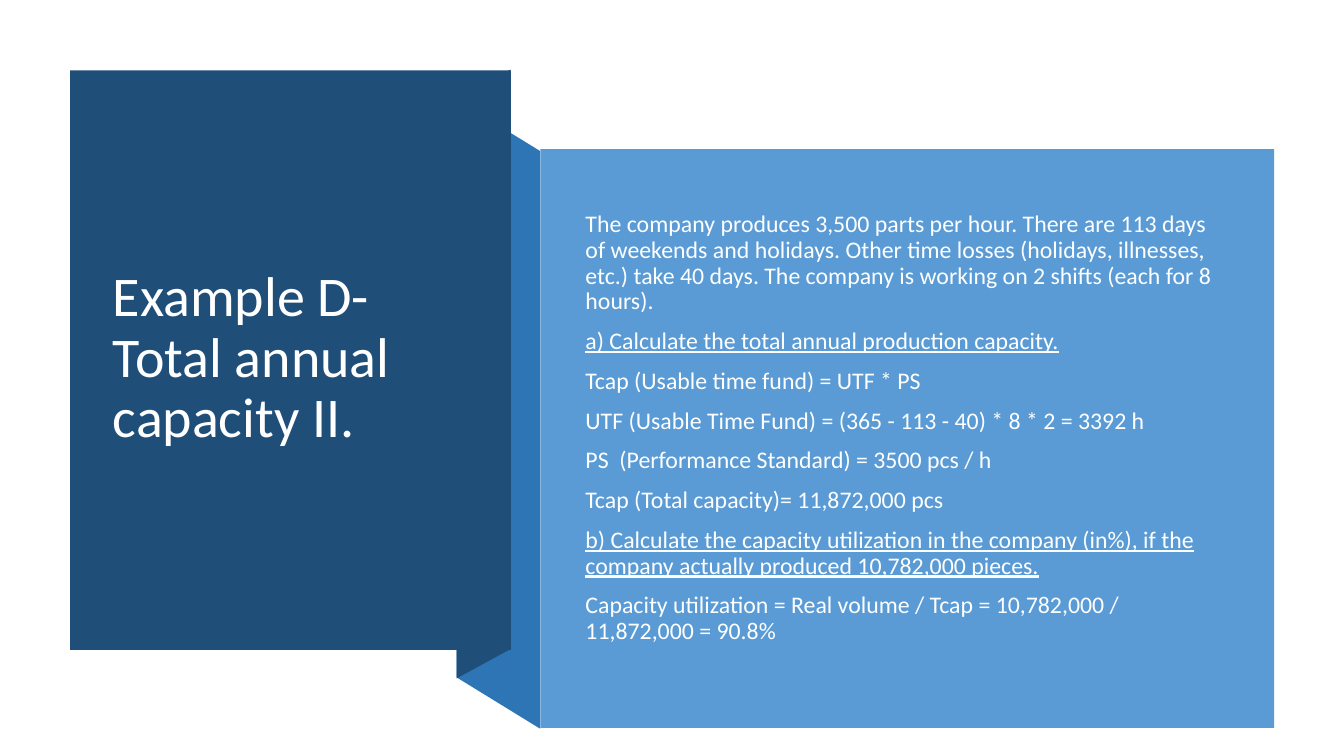
from pptx import Presentation
from pptx.dml.color import RGBColor
from pptx.enum import shapes, text
from pptx.util import Pt

COLORS = {"dark": "1F4E79", "fold": "2E75B6", "light": "5B9BD5",
          "title": "FFFFFF", "body": "FEFFFF"}

TITLE = "Example D- Total annual capacity II. "
# Each paragraph: wording, underlined
BODY = [
    ("The company produces 3,500 parts per hour. There are 113 days of weekends "
     "and holidays. Other time losses (holidays, illnesses, etc.) take 40 days. "
     "The company is working on 2 shifts (each for 8 hours).", False),
    ("a) Calculate the total annual production capacity.", True),
    ("Tcap (Usable time fund) = UTF * PS", False),
    ("UTF (Usable Time Fund) = (365 - 113 - 40) * 8 * 2 = 3392 h", False),
    ("PS  (Performance Standard) = 3500 pcs / h", False),
    ("Tcap (Total capacity)= 11,872,000 pcs", False),
    ("b) Calculate the capacity utilization in the company (in%), if the company "
     "actually produced 10,782,000 pieces.", True),
    ("Capacity utilization = Real volume / Tcap = 10,782,000 / 11,872,000 = 90.8%",
     False),
]


def rgb(name):
    return RGBColor.from_string(COLORS[name])


def set_attrs(obj, values):
    for name, value in values.items():
        setattr(obj, name, value)


def paint(sp, color):
    sp.shadow.inherit = False
    sp.fill.solid()
    sp.fill.fore_color.rgb = rgb(color)
    sp.line.fill.background()


def add_panel(s, left, top, width, height, color):
    sp = s.shapes.add_shape(shapes.MSO_SHAPE.RECTANGLE,
                            Pt(left), Pt(top), Pt(width), Pt(height))
    paint(sp, color)


def add_fold(s, left, right, outer_top, inner_top, height, color):
    """Slanted band with two vertical sides of equal height."""
    corners = [(left, outer_top), (right, inner_top),
               (right, inner_top + height), (left, outer_top + height)]
    points = [(Pt(x), Pt(y)) for x, y in corners]
    builder = s.shapes.build_freeform(*points[0])
    builder.add_line_segments(points[1:], close=True)
    paint(builder.convert_to_shape(), color)


def write(sp, box, paragraphs, size, color, space):
    set_attrs(sp, dict(zip(("left", "top", "width", "height"), map(Pt, box))))
    tf = sp.text_frame
    set_attrs(tf, {"word_wrap": True, "auto_size": text.MSO_AUTO_SIZE.NONE,
                   "vertical_anchor": text.MSO_ANCHOR.MIDDLE})
    for i, (words, underline) in enumerate(paragraphs):
        p = tf.add_paragraph() if i else tf.paragraphs[0]
        set_attrs(p, {"alignment": text.PP_ALIGN.LEFT, "line_spacing": 0.9,
                      "space_before": Pt(space)})
        r = p.add_run()
        r.text = words
        set_attrs(r.font, {"name": "Calibri", "size": Pt(size),
                           "underline": underline})
        r.font.color.rgb = rgb(color)


def main():
    prs = Presentation()
    set_attrs(prs, {"slide_width": Pt(960), "slide_height": Pt(540)})
    s = prs.slides.add_slide(prs.slide_layouts[5])

    # Folded ribbon and title panel
    add_fold(s, 326.2, 385.9, 71.3, 108, 412.6, "fold")
    add_fold(s, 326.2, 364.6, 70.6, 49.7, 414, "dark")
    add_panel(s, 50, 50.2, 315, 414, "dark")

    # Title, brought in front of its panel
    title = s.shapes.title
    s.shapes.element.append(title.element)
    write(title, (73.4, 77, 282.2, 359.3), [(TITLE, False)], 40, "title", 0)

    # Worked example
    add_panel(s, 385.9, 106.6, 524.2, 413.3, "light")
    body = s.shapes.add_textbox(0, 0, 0, 0)
    write(body, (411.1, 135.4, 468.7, 341.3), BODY, 17, "body", 10)

    prs.save("out.pptx")


if __name__ == "__main__":
    main()
